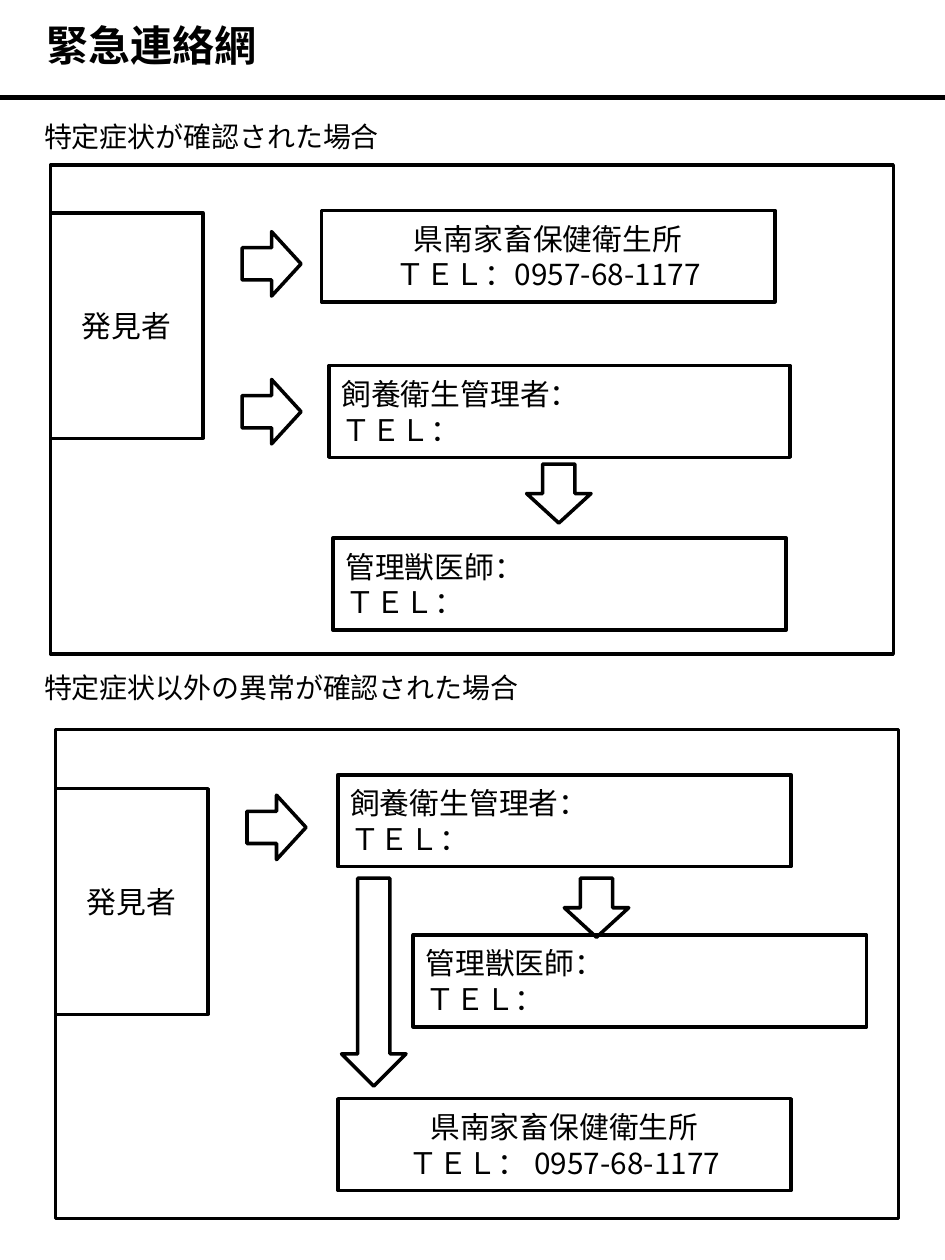
from lxml.etree import SubElement
from pptx import Presentation
from pptx.dml.color import RGBColor
from pptx.enum.shapes import MSO_CONNECTOR, MSO_SHAPE
from pptx.enum.text import MSO_ANCHOR, MSO_AUTO_SIZE, PP_ALIGN
from pptx.oxml.ns import qn
from pptx.util import Cm, Pt

FINDER = "発見者"
KEEPER = "飼養衛生管理者：\nＴＥＬ："
VET = "管理獣医師：\nＴＥＬ："
OFFICE = "県南家畜保健衛生所\nＴＥＬ：{}0957-68-1177"


def hue(code):
    return RGBColor.from_string(code)


def apply(item, values):
    for key, value in values.items():
        setattr(item, key, value)


class Sheet:
    """Holds the style and the slide, and draws each kind of element."""

    face = "Noto Sans CJK JP"
    ink = "000000"
    body = {"word_wrap": True, "vertical_anchor": MSO_ANCHOR.MIDDLE}
    label = {"word_wrap": True, "auto_size": MSO_AUTO_SIZE.SHAPE_TO_FIT_TEXT}

    def __init__(self, slide):
        self.slide = slide

    def pen(self, line, width):
        line.color.rgb = hue(self.ink)
        line.width = Pt(width)

    def letter(self, frame, text, size, align=PP_ALIGN.LEFT, bold=False):
        frame.text = text
        for para in frame.paragraphs:
            para.alignment = align
            for run in para.runs:
                apply(run.font, {"name": self.face, "size": Pt(size), "bold": bold})
                run.font.color.rgb = hue(self.ink)
                mark = SubElement(run.font._element, qn("a:ea"))
                mark.set("typeface", self.face)

    def text(self, x, y, wide, high, text, size=16, bold=False, **extra):
        box = self.slide.shapes.add_textbox(Cm(x), Cm(y), Cm(wide), Cm(high))
        apply(box.text_frame, {**self.label, **extra})
        self.letter(box.text_frame, text, size, bold=bold)

    def shape(self, kind, x, y, wide, high):
        item = self.slide.shapes.add_shape(kind, Cm(x), Cm(y), Cm(wide), Cm(high))
        item.shadow.inherit = False
        item.fill.background()
        self.pen(item.line, 2)
        return item

    def box(self, x, y, text, wide=9.14, high=1.85, align=PP_ALIGN.LEFT):
        item = self.shape(MSO_SHAPE.RECTANGLE, x, y, wide, high)
        apply(item.text_frame, self.body)
        self.letter(item.text_frame, text, 17, align)

    def arrow(self, x, y, turn=0, reach=1.19):
        self.shape(MSO_SHAPE.RIGHT_ARROW, x, y, reach, 1.3).rotation = turn

    def rule(self, y, wide):
        line = self.slide.shapes.add_connector(
            MSO_CONNECTOR.STRAIGHT, 0, Cm(y), Cm(wide), Cm(y))
        self.pen(line.line, 3)
        SubElement(line._element.spPr, qn("a:effectLst"))

    def case(self, x, y, title, head, drop):
        self.text(0.64, head, 14.66, 0.94, title)
        self.shape(MSO_SHAPE.RECTANGLE, x, y, 16.99, 9.86)
        self.box(x, y + drop, FINDER, 3.07, 4.55, PP_ALIGN.CENTER)


def main():
    deck = Presentation()
    apply(deck, {"slide_width": Cm(19.05), "slide_height": Cm(25.4)})
    sheet = Sheet(deck.slides.add_slide(deck.slide_layouts[6]))
    mid = PP_ALIGN.CENTER

    sheet.rule(1.96, 19.05)
    side, edge = Cm(0.3), Cm(0.15)
    sheet.text(0.64, 0.23, 18.44, 1.35, "緊急連絡網", 24, True,
               vertical_anchor=MSO_ANCHOR.MIDDLE, margin_left=side,
               margin_right=side, margin_top=edge, margin_bottom=edge)

    sheet.case(1.02, 3.33, "特定症状が確認された場合", 2.29, 0.96)
    sheet.box(6.48, 4.24, OFFICE.format(""), align=mid)
    sheet.box(6.63, 7.37, KEEPER, 9.3)
    sheet.box(6.71, 10.85, VET)
    for y in (4.67, 7.65):
        sheet.arrow(4.88, y)
    sheet.arrow(10.67, 9.3, 90)

    sheet.case(1.12, 14.71, "特定症状以外の異常が確認された場合", 13.39, 1.19)
    sheet.box(6.81, 15.62, KEEPER)
    sheet.box(6.81, 22.15, OFFICE.format(" "), align=mid)
    sheet.box(8.33, 18.85, VET)
    sheet.arrow(4.98, 16.03)
    sheet.arrow(5.44, 19.15, 90, 4.19)
    sheet.arrow(11.43, 17.65, 90)

    deck.save("out.pptx")


if __name__ == "__main__":
    main()
